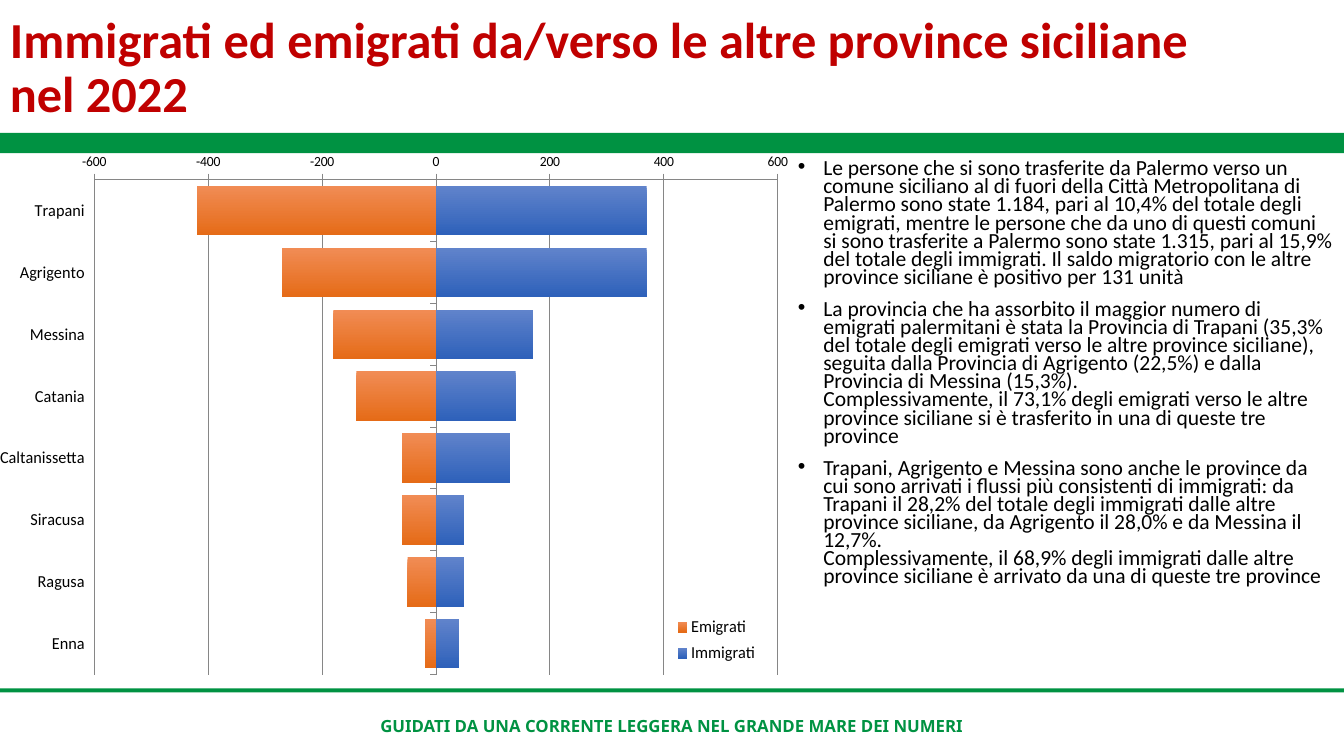
from dataclasses import dataclass

from lxml import etree
from pptx import Presentation
from pptx import util as u
from pptx.chart.data import CategoryChartData
from pptx.dml.color import RGBColor
from pptx.enum import chart as ch, shapes, text
from pptx.oxml import parse_xml
from pptx.oxml.ns import nsdecls, qn


@dataclass(frozen=True)
class Theme:
    green: str = "009242"
    red: str = "C00000"
    black: str = "000000"
    grid: str = "868686"
    blues: tuple = ("6083CB", "2E61BA")
    oranges: tuple = ("F18C55", "E56B17")
    title: float = 36
    body: float = 15.4
    label: float = 12
    tick: float = 10
    face: str = "Calibri"
    footer_face: str = "Noto Sans"


TITLE = "Immigrati ed emigrati da/verso le altre province siciliane nel 2022"
FOOTER = "GUIDATI DA UNA CORRENTE LEGGERA NEL GRANDE MARE DEI NUMERI"
POINTS = [
    "Le persone che si sono trasferite da Palermo verso un comune siciliano al di fuori "
    "della Città Metropolitana di Palermo sono state 1.184, pari al 10,4% del totale degli "
    "emigrati, mentre le persone che da uno di questi comuni si sono trasferite a Palermo "
    "sono state 1.315, pari al 15,9% del totale degli immigrati. Il saldo migratorio con le "
    "altre province siciliane è positivo per 131 unità",
    "La provincia che ha assorbito il maggior numero di emigrati palermitani è stata la "
    "Provincia di Trapani (35,3% del totale degli emigrati verso le altre province "
    "siciliane), seguita dalla Provincia di Agrigento (22,5%) e dalla Provincia di Messina "
    "(15,3%). \vComplessivamente, il 73,1% degli emigrati verso le altre province siciliane "
    "si è trasferito in una di queste tre province",
    "Trapani, Agrigento e Messina sono anche le province da cui sono arrivati i flussi più "
    "consistenti di immigrati: da Trapani il 28,2% del totale degli immigrati dalle altre "
    "province siciliane, da Agrigento il 28,0% e da Messina il 12,7%. \vComplessivamente, il "
    "68,9% degli immigrati dalle altre province siciliane è arrivato da una di queste tre "
    "province",
]
PROVINCES = ["Trapani", "Agrigento", "Messina", "Catania",
             "Caltanissetta", "Siracusa", "Ragusa", "Enna"]
FLOWS = {
    "Immigrati": [370, 370, 170, 140, 130, 50, 50, 40],
    "Emigrati": [-420, -270, -180, -140, -60, -60, -50, -20],
}


def apply(target, **values):
    for name, value in values.items():
        setattr(target, name, value)


class SlideBuilder:
    def __init__(self, page, theme):
        self.page, self.theme = page, theme

    def style_font(self, font, size, color=None, bold=False, face=None):
        apply(font, name=face or self.theme.face, size=u.Pt(size), bold=bold)
        font.color.rgb = RGBColor.from_string(color or self.theme.black)

    def band(self, *place):
        bar = self.page.shapes.add_shape(shapes.MSO_SHAPE.RECTANGLE, *map(u.Cm, place))
        bar.shadow.inherit = False
        bar.fill.solid()
        bar.fill.fore_color.rgb = RGBColor.from_string(self.theme.green)
        bar.line.fill.background()

    def text_box(self, place, paragraphs, font, layout, frame=None, bullet=False):
        box = self.page.shapes.add_textbox(*map(u.Cm, place)).text_frame
        apply(box, word_wrap=True, **(frame or {}))
        for index, words in enumerate(paragraphs):
            para = box.paragraphs[0] if index == 0 else box.add_paragraph()
            para.text = words
            apply(para, **layout)
            if index == 0:
                para.space_before = u.Pt(0)
            if bullet:
                self.add_bullet(para)
            self.style_font(para.font, **font)
            for span in para.runs:
                self.style_font(span.font, **font)

    def add_bullet(self, para):
        props = para._p.get_or_add_pPr()
        props.set("marL", str(u.Cm(0.64)))
        props.set("indent", str(u.Cm(-0.64)))
        etree.SubElement(props, qn("a:buFont")).set("typeface", "Arial")
        etree.SubElement(props, qn("a:buChar")).set("char", "•")

    def place_part(self, part, x, y, w, h, inner=False):
        """Fix a chart part at fractions of the chart area."""
        old = part.find(qn("c:layout"))
        values = {"xMode": "edge", "yMode": "edge", "x": x, "y": y, "w": w, "h": h}
        if inner:
            values = {"layoutTarget": "inner", **values}
        marks = "".join(f'<c:{name} val="{value}"/>' for name, value in values.items())
        layout = parse_xml(f'<c:layout {nsdecls("c")}><c:manualLayout>{marks}'
                           "</c:manualLayout></c:layout>")
        if old is not None:
            part.replace(old, layout)
        else:
            part.insert(0 if inner else 1, layout)

    def bar_chart(self, place, categories, flows, colors):
        data = CategoryChartData()
        data.categories = categories
        for name, values in flows.items():
            data.add_series(name, values)
        chart = self.page.shapes.add_chart(
            ch.XL_CHART_TYPE.BAR_CLUSTERED, *map(u.Cm, place), data).chart
        apply(chart, has_title=False, has_legend=True)
        self.style_font(chart.font, self.theme.tick)

        # Bars
        plot = chart.plots[0]
        apply(plot, gap_width=25, overlap=100, vary_by_categories=False)
        for series, shades in zip(plot.series, colors):
            series.invert_if_negative = False
            fill = series.format.fill
            fill.gradient()
            fill.gradient_angle = 270
            for stop, shade, position in zip(fill.gradient_stops, shades, (0, 1)):
                stop.color.rgb = RGBColor.from_string(shade)
                stop.position = position

        # Axes
        provinces, people = chart.category_axis, chart.value_axis
        apply(provinces, reverse_order=True, has_major_gridlines=False,
              tick_label_position=ch.XL_TICK_LABEL_POSITION.LOW)
        apply(people, minimum_scale=-600, maximum_scale=600, major_unit=200,
              has_major_gridlines=True)
        for axis, size in ((provinces, self.theme.label), (people, self.theme.tick)):
            axis.major_tick_mark = ch.XL_TICK_MARK.OUTSIDE
            self.style_font(axis.tick_labels.font, size)
        for line in (provinces.format.line, people.format.line,
                     people.major_gridlines.format.line):
            line.color.rgb = RGBColor.from_string(self.theme.grid)
            line.width = u.Pt(0.75)

        # Legend and plot area
        apply(chart.legend, position=ch.XL_LEGEND_POSITION.RIGHT, include_in_layout=False)
        self.style_font(chart.legend.font, self.theme.label)
        self.place_part(chart.legend._element, 0.84, 0.86, 0.12, 0.11)
        area = chart._chartSpace.find(".//" + qn("c:plotArea"))
        self.place_part(area, 0.09, 0.05, 0.89, 0.93, inner=True)


def main():
    theme = Theme()
    deck = Presentation()
    apply(deck, slide_width=u.Cm(33.87), slide_height=u.Cm(19.05))
    slide = SlideBuilder(deck.slides.add_slide(deck.slide_layouts[6]), theme)

    # Green bands and footer
    slide.band(0, 3.35, 33.87, 0.51)
    slide.band(0, 17.35, 33.87, 0.1)
    slide.text_box((7.14, 17.91, 19.58, 0.76), [FOOTER],
                   dict(size=theme.label, color=theme.green, bold=True,
                        face=theme.footer_face),
                   dict(alignment=text.PP_ALIGN.CENTER, space_after=u.Pt(3)))

    # Title
    slide.text_box((0, 0.38, 31.55, 2.72), [TITLE],
                   dict(size=theme.title, color=theme.red, bold=True),
                   dict(line_spacing=0.9),
                   dict(vertical_anchor=text.MSO_ANCHOR.MIDDLE))

    # Comments beside the chart
    slide.text_box((19.86, 3.94, 14, 13.41), POINTS, dict(size=theme.body),
                   dict(line_spacing=0.7, space_before=u.Pt(10)), bullet=True)

    # Migration flows
    slide.bar_chart((0, 3.86, 19.99, 13.41), PROVINCES, FLOWS,
                    (theme.blues, theme.oranges))

    deck.save("out.pptx")


if __name__ == "__main__":
    main()
